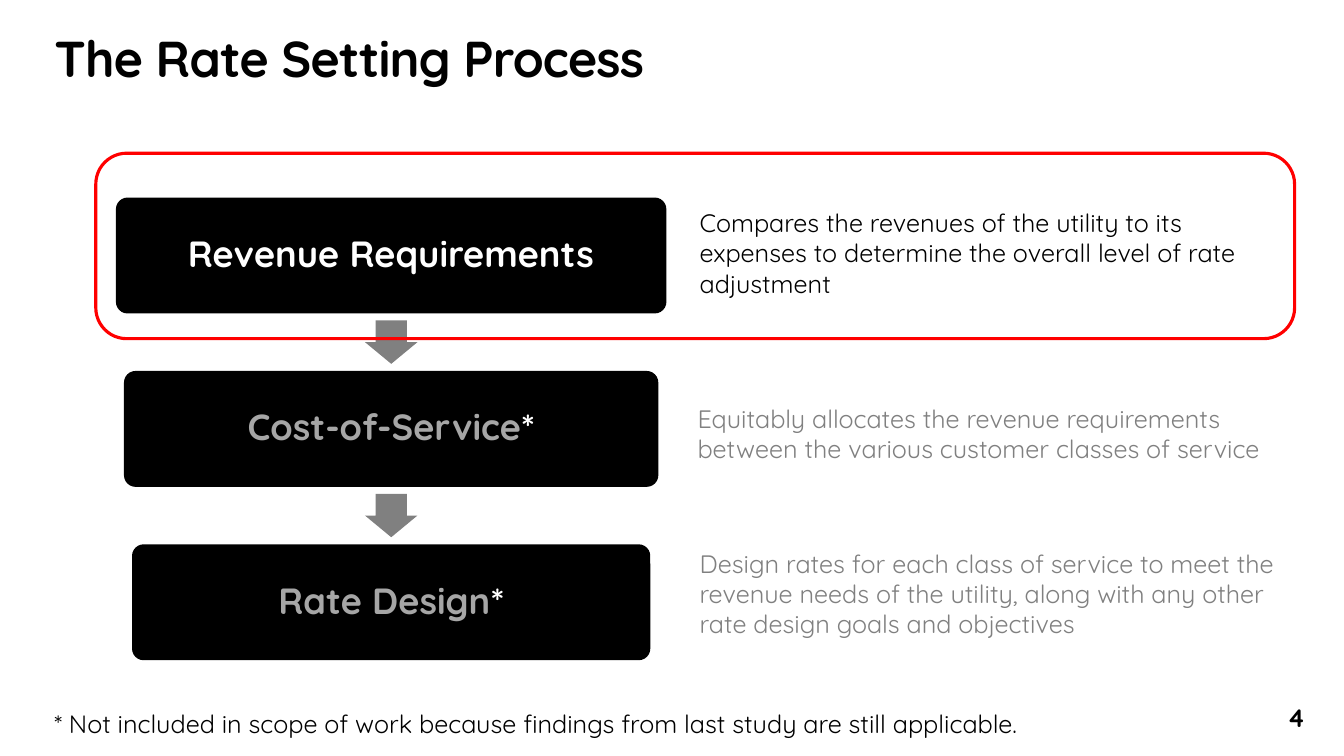
from pptx import Presentation
from pptx.dml.color import RGBColor
from pptx.enum.shapes import MSO_SHAPE
from pptx.enum.text import MSO_ANCHOR, MSO_AUTO_SIZE, PP_ALIGN
from pptx.util import Inches, Pt

COLORS = {
    "ink": "000000",
    "paper": "FFFFFF",
    "muted": "808080",
    "out_of_scope": "A6A6A6",
    "highlight": "FF0000",
}
FONT = "Quicksand"
STEP_PITCH = 1.72
STEP_NARROWING = 0.16
STEP_HEIGHT = 1.15
ARROW_LENGTH, ARROW_WIDTH = 0.43, 0.52

STEPS = [
    ("Revenue Requirements", "", "paper"),
    ("Cost-of-Service", "*", "out_of_scope"),
    ("Rate Design", "*", "out_of_scope"),
]
EXPLANATIONS = [
    ("Compares the revenues of the utility to its expenses to determine "
     "the overall level of rate adjustment", "ink", (6.84, 2.01, 5.92, 1.01)),
    ("Equitably allocates the revenue requirements between the various "
     "customer classes of service", "muted", (6.82, 3.95, 6.33, 0.71)),
    ("Design rates for each class of service to meet the revenue needs of the "
     "utility, along with any other rate design goals and objectives",
     "muted", (6.84, 5.39, 5.92, 1.01)),
]


def rgb(name):
    """Return the named palette colour."""
    return RGBColor.from_string(COLORS[name])


def apply_format(target, values):
    """Set every attribute listed in values on target."""
    for attribute, value in values.items():
        setattr(target, attribute, value)


def add_words(paragraph, words, size, color, bold=False):
    """Append a run in the slide font and return it."""
    run = paragraph.add_run()
    run.text = words
    apply_format(run.font, {"name": FONT, "size": Pt(size), "bold": bold})
    run.font.color.rgb = rgb(color)
    return run


def add_block(slide, kind, box, fill=None):
    """Add a preset shape without shadow or outline, filled if asked."""
    block = slide.shapes.add_shape(kind, *map(Inches, box))
    block.shadow.inherit = False
    block.line.fill.background()
    if fill:
        block.fill.solid()
        block.fill.fore_color.rgb = rgb(fill)
    else:
        block.fill.background()
    return block


def add_title(slide, box, words):
    """Place the slide title in its placeholder."""
    title = slide.shapes.title
    apply_format(title, dict(zip(("left", "top", "width", "height"), map(Inches, box))))
    apply_format(title.text_frame, {
        "vertical_anchor": MSO_ANCHOR.MIDDLE,
        "auto_size": MSO_AUTO_SIZE.NONE,
        "word_wrap": True,
    })
    paragraph = title.text_frame.paragraphs[0]
    apply_format(paragraph, {"alignment": PP_ALIGN.LEFT, "line_spacing": 0.9})
    heading = add_words(paragraph, words, 36, "ink", bold=True)
    heading._r.get_or_add_rPr().set("spc", "-60")


def add_note(slide, box, words, color="ink", bold=False):
    """Add a wrapping text box of plain 18 point text."""
    note = slide.shapes.add_textbox(*map(Inches, box))
    note.text_frame.word_wrap = True
    add_words(note.text_frame.paragraphs[0], words, 18, color, bold)


def add_step(slide, box, name, marker, color):
    """Add one process step with its name and optional footnote marker."""
    step = add_block(slide, MSO_SHAPE.ROUNDED_RECTANGLE, box, "ink")
    step.adjustments[0] = 0.1
    apply_format(step.text_frame, {
        "word_wrap": True,
        "vertical_anchor": MSO_ANCHOR.MIDDLE,
        **{f"margin_{side}": Inches(0.11) for side in ("left", "right", "top", "bottom")},
    })
    paragraph = step.text_frame.paragraphs[0]
    apply_format(paragraph, {"alignment": PP_ALIGN.CENTER, "line_spacing": 0.9})
    add_words(paragraph, name, 26, color, bold=True)
    if marker:
        add_words(paragraph, marker, 26, "paper", bold=True)


def add_process(slide, box):
    """Stack the narrowing steps in the box, with an arrow between neighbours."""
    left, top, width = box
    center = left + width / 2
    for index, (name, marker, color) in enumerate(STEPS):
        step_top = top + index * STEP_PITCH
        inset = index * STEP_NARROWING / 2
        add_step(slide, (left + inset, step_top, width - 2 * inset, STEP_HEIGHT),
                 name, marker, color)
        if index < len(STEPS) - 1:
            gap_middle = step_top + (STEP_HEIGHT + STEP_PITCH) / 2
            arrow = add_block(slide, MSO_SHAPE.RIGHT_ARROW, (
                center - ARROW_LENGTH / 2, gap_middle - ARROW_WIDTH / 2,
                ARROW_LENGTH, ARROW_WIDTH), "muted")
            arrow.rotation = 90
            arrow.adjustments[0] = 0.6
            arrow.adjustments[1] = 0.5


def add_highlight(slide, box):
    """Outline the step that is in scope."""
    outline = add_block(slide, MSO_SHAPE.ROUNDED_RECTANGLE, box)
    outline.line.color.rgb = rgb("highlight")
    outline.line.width = Pt(2.25)


def build_rate_setting_slide(deck):
    """Build the rate setting process slide."""
    slide = deck.slides.add_slide(deck.slide_layouts[5])
    add_title(slide, (0.44, 0.28, 12.22, 0.65), "The Rate Setting Process")
    for words, color, box in EXPLANATIONS:
        add_note(slide, box, words, color)
    add_process(slide, (1.15, 1.96, 5.46))
    add_note(slide, (12.67, 6.92, 0.39, 0.4), "4", bold=True)
    add_highlight(slide, (0.95, 1.52, 11.89, 1.84))
    add_note(slide, (0.44, 6.98, 10.54, 0.4),
             "* Not included in scope of work because findings from last study "
             "are still applicable.")


def main():
    """Create and save the deck."""
    deck = Presentation()
    apply_format(deck, {"slide_width": Inches(13.33), "slide_height": Inches(7.5)})
    build_rate_setting_slide(deck)
    deck.save("out.pptx")


if __name__ == "__main__":
    main()
